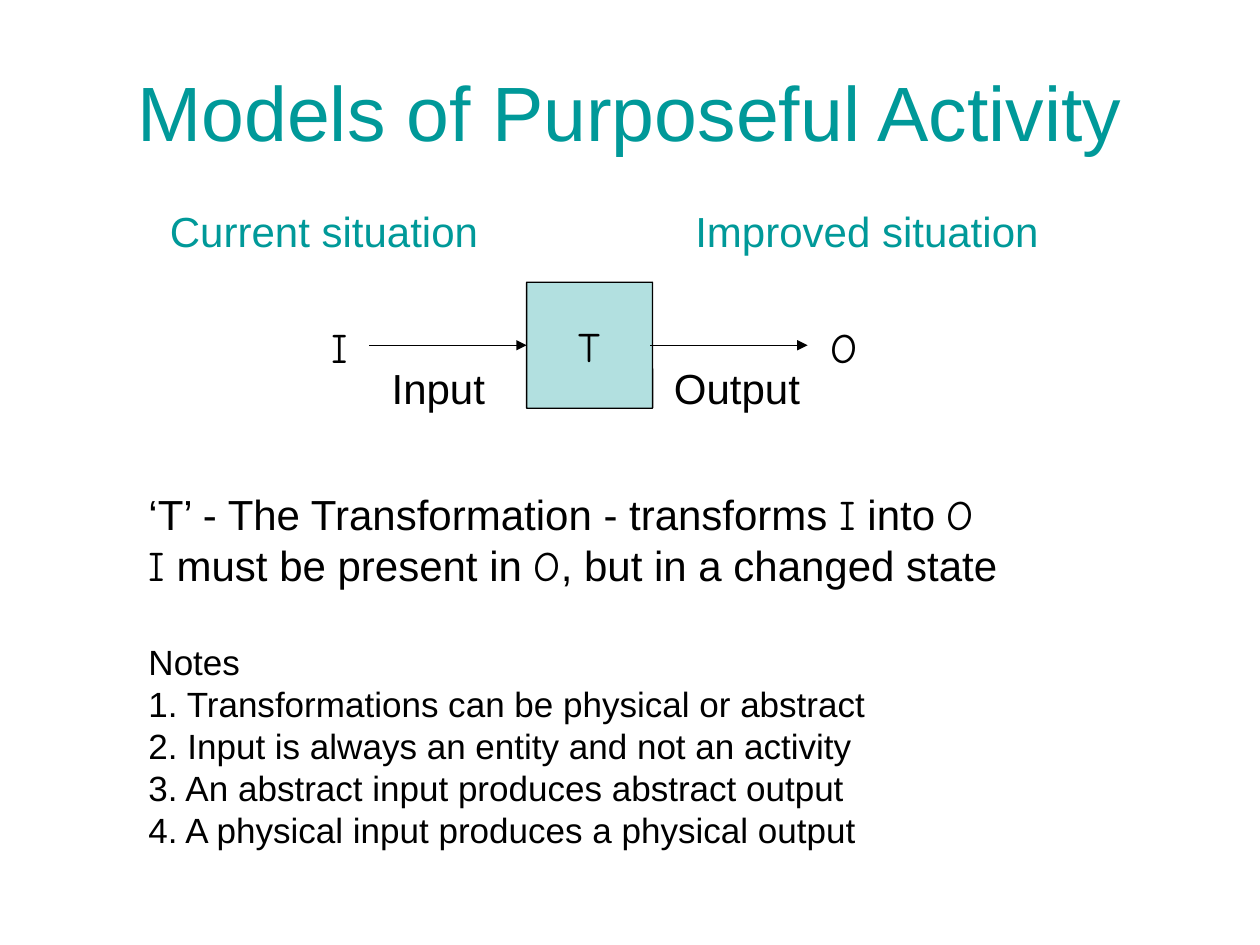
from dataclasses import dataclass

from lxml.etree import SubElement
from pptx import Presentation
from pptx.dml.color import RGBColor
from pptx.enum.shapes import MSO_CONNECTOR as Connector, MSO_SHAPE as Shape
from pptx.enum.text import MSO_ANCHOR as Anchor, PP_ALIGN as Align
from pptx.oxml.ns import qn
from pptx.util import Inches, Pt

TEAL, BLACK = "009999", "000000"
SANS, SYMBOL = "Arial", "Comic Neue"


@dataclass
class Caption:
    text: str
    left: float
    top: float
    width: float
    color: str = BLACK
    wrap: bool = True


@dataclass
class Symbol:
    text: str
    left: float


@dataclass
class Arrow:
    start: float
    end: float


@dataclass
class Line:
    pieces: list[tuple[str, str]]  # wording and its font
    size: float = 24
    before: float = 0


def rgb(color: str) -> RGBColor:
    return RGBColor.from_string(color)


def write(paragraph, text: str, *, font=SANS, size=24, color=BLACK,
          align=Align.LEFT) -> None:
    paragraph.alignment = align
    run = paragraph.add_run()
    run.text = text
    run.font.name = font
    run.font.size = Pt(size)
    run.font.color.rgb = rgb(color)


def add_frame(slide, left: float, top: float, width: float, height: float):
    box = slide.shapes.add_textbox(Inches(left), Inches(top), Inches(width), Inches(height))
    box.text_frame.word_wrap = True
    return box.text_frame


def add_block(slide, left: float, top: float, width: float, height: float):
    """Add a block with barely rounded corners."""
    block = slide.shapes.add_shape(Shape.ROUNDED_RECTANGLE, Inches(left), Inches(top),
                                   Inches(width), Inches(height))
    block.adjustments[0] = 0.0025
    block.shadow.inherit = False
    return block


def draw_caption(slide, caption: Caption) -> None:
    block = add_block(slide, caption.left, caption.top, caption.width, 0.51)
    block.fill.background()
    block.line.fill.background()
    block.text_frame.word_wrap = caption.wrap
    block.text_frame.vertical_anchor = Anchor.TOP
    write(block.text_frame.paragraphs[0], caption.text, color=caption.color)


def draw_symbol(slide, symbol: Symbol) -> None:
    frame = add_frame(slide, symbol.left, 2.5, 0.58, 0.5)
    write(frame.paragraphs[0], symbol.text, font=SYMBOL, align=Align.CENTER)


def draw_arrow(slide, arrow: Arrow, y: float) -> None:
    line = slide.shapes.add_connector(Connector.STRAIGHT, Inches(arrow.start), Inches(y),
                                      Inches(arrow.end), Inches(y))
    line.line.color.rgb = rgb(BLACK)
    line.line.width = Pt(0.75)
    SubElement(line.line._get_or_add_ln(), qn("a:tailEnd"), type="triangle")
    SubElement(line._element.spPr, qn("a:effectLst"))


def draw_transformation(slide, left: float, top: float, side: float) -> None:
    square = add_block(slide, left, top, side, side)
    square.fill.solid()
    square.fill.fore_color.rgb = rgb(TEAL)
    tint = square._element.spPr.find(f".//{qn('a:srgbClr')}")
    SubElement(tint, qn("a:alpha"), val="30000")
    square.line.color.rgb = rgb(BLACK)
    square.line.width = Pt(0.75)
    square.text_frame.vertical_anchor = Anchor.MIDDLE
    write(square.text_frame.paragraphs[0], "T", font=SYMBOL, align=Align.CENTER)


def draw_explanation(slide, lines: list[Line]) -> None:
    frame = add_frame(slide, 1.08, 3.83, 8.25, 3)
    for index, line in enumerate(lines):
        paragraph = frame.add_paragraph() if index else frame.paragraphs[0]
        if line.before:
            paragraph.space_before = Pt(line.before)
        for wording, font in line.pieces:
            write(paragraph, wording, font=font, size=line.size)


INPUT, OUTPUT = ("I", SYMBOL), ("O", SYMBOL)
NOTES = [
    "Transformations can be physical or abstract",
    "Input is always an entity and not an activity",
    "An abstract input produces abstract output",
    "A physical input produces a physical output",
]
EXPLANATION = [
    Line([("‘T’ - The Transformation - transforms ", SANS), INPUT, (" into ", SANS), OUTPUT]),
    Line([INPUT, (" must be present in ", SANS), OUTPUT,
          (", but in a changed state", SANS)]),
    Line([("Notes", SANS)], size=20, before=29),
    *(Line([(f"{number}. {note}", SANS)], size=20)
      for number, note in enumerate(NOTES, start=1)),
]
CAPTIONS = [
    Caption("Input", 3.01, 2.83, 0.95, wrap=False),
    Caption("Output", 5.25, 2.83, 1.21, wrap=False),
    Caption("Current situation", 1.25, 1.58, 2.75, TEAL),
    Caption("Improved situation", 5.42, 1.58, 3.42, TEAL),
]
SYMBOLS = [Symbol("I", 2.41), Symbol("O", 6.41)]
ARROWS = [Arrow(2.93, 4.18), Arrow(5.16, 6.41)]


def main() -> None:
    deck = Presentation()
    deck.slide_width, deck.slide_height = Inches(10), Inches(7.5)
    slide = deck.slides.add_slide(deck.slide_layouts[6])

    # Title
    title = add_frame(slide, 0.75, 0.25, 8.5, 1.25)
    title.vertical_anchor = Anchor.MIDDLE
    write(title.paragraphs[0], "Models of Purposeful Activity", size=44, color=TEAL,
          align=Align.CENTER)

    # Explanation and notes
    draw_explanation(slide, EXPLANATION)

    # Input, transformation, output
    draw_transformation(slide, 4.18, 2.24, 1)
    for arrow in ARROWS:
        draw_arrow(slide, arrow, 2.74)
    for symbol in SYMBOLS:
        draw_symbol(slide, symbol)
    for caption in CAPTIONS:
        draw_caption(slide, caption)

    deck.save("out.pptx")


if __name__ == "__main__":
    main()
